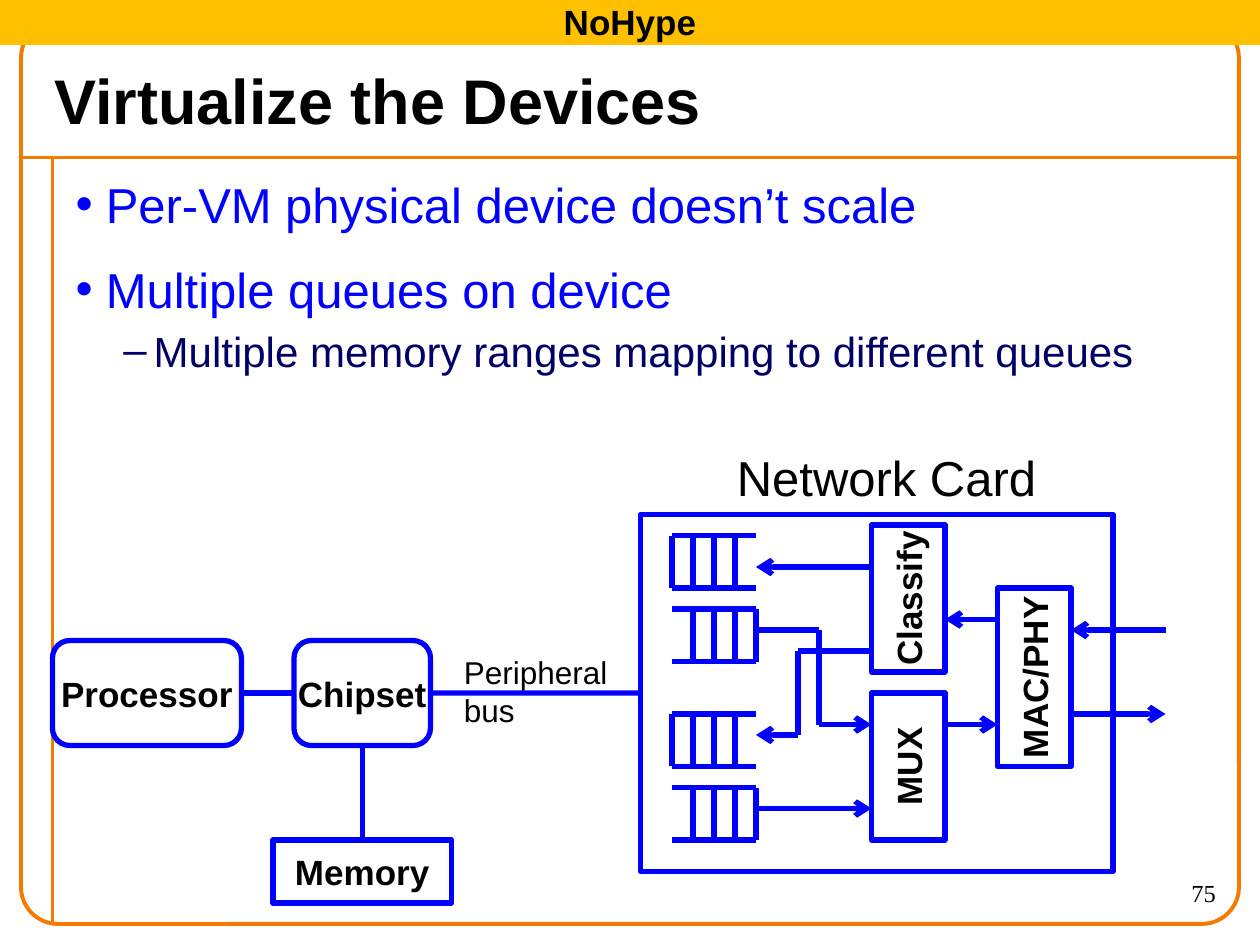
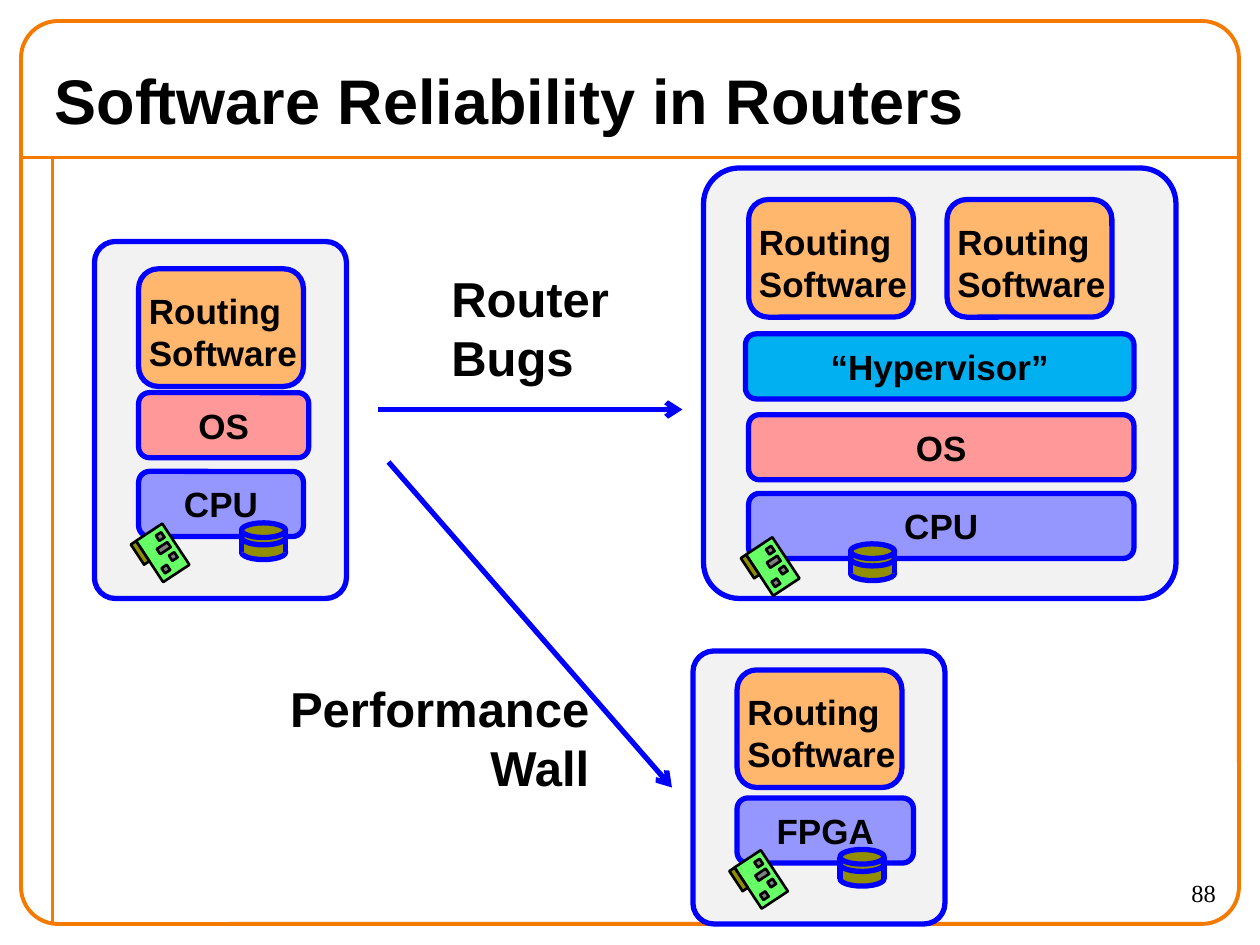
from itertools import pairwise

from lxml import etree
from pptx import Presentation
from pptx import util as u
from pptx.dml.color import RGBColor
from pptx.enum import shapes, text
from pptx.oxml.ns import qn

ORANGE = RGBColor(0xF4, 0x7A, 0x00)
BLUE = RGBColor(0x00, 0x00, 0xFF)
NAVY = RGBColor(0x00, 0x00, 0x66)
BLACK = RGBColor(0x00, 0x00, 0x00)
GOLD = RGBColor(0xFF, 0xC0, 0x00)
PANEL = RGBColor(0xF2, 0xF2, 0xF2)
PEACH = RGBColor(0xFF, 0xB6, 0x6D)
PINK = RGBColor(0xFF, 0x99, 0x99)
VIOLET = RGBColor(0x96, 0x96, 0xFF)
SKY = RGBColor(0x00, 0xB0, 0xF0)
OLIVE = RGBColor(0x91, 0x8E, 0x00)
GREEN = RGBColor(0x66, 0xFF, 0x66)
GRAY = RGBColor(0x80, 0x80, 0x80)

RECT = shapes.MSO_SHAPE.RECTANGLE
ROUND = shapes.MSO_SHAPE.ROUNDED_RECTANGLE
OVAL = shapes.MSO_SHAPE.OVAL
LEFT, CENTER, RIGHT = text.PP_ALIGN.LEFT, text.PP_ALIGN.CENTER, text.PP_ALIGN.RIGHT
MIDDLE = text.MSO_ANCHOR.MIDDLE

TITLE = dict(name="Arial", size=u.Pt(36), bold=True)
LABEL = dict(name="Arial", size=u.Pt(20), bold=True)
CALLOUT = dict(name="Arial", size=u.Pt(28), bold=True)
CAPTION = dict(name="Arial", size=u.Pt(28), bold=False)
NOTE = dict(name="Arial", size=u.Pt(18), bold=False)
NUMBER = dict(name="Times New Roman", size=u.Pt(14), bold=False)

BULLETS = [
    dict(char="•", size=28, color=BLUE, margin=0.24, level=0),
    dict(char="–", size=24, color=NAVY, margin=0.62, level=1),
]
CARD_PARTS = [
    (0, 0, 3, 4.7, GREEN),
    (-0.96, 1.2, 0.6, 2.3, OLIVE),
    (0.96, 0.5, 0.6, 0.6, GRAY),
    (2.2, 2.4, 0.6, 0.6, GRAY),
    (1, 1.6, 1.2, 0.6, GRAY),
    (1.5, 3.6, 0.6, 0.6, GRAY),
]


def grid(*cells):
    return [u.Inches(c / 12) for c in cells]


def set_all(obj, values):
    for key, value in values.items():
        setattr(obj, key, value)


def write(tf, lines, style, align=LEFT, color=BLACK):
    for i, line in enumerate(lines):
        p = tf.paragraphs[0] if i == 0 else tf.add_paragraph()
        p.alignment = align
        r = p.add_run()
        r.text = line
        set_all(r.font, style)
        r.font.color.rgb = color


def label(s, box, lines, style, align=LEFT):
    tf = s.shapes.add_textbox(*grid(*box)).text_frame
    tf.word_wrap = False
    write(tf, lines, style, align)


def block(s, kind, box, caption=None, fill=None, line=BLUE, width=3, adj=None, vertical=False):
    sp = s.shapes.add_shape(kind, *grid(*box))
    sp.shadow.inherit = False
    if adj is not None:
        sp.adjustments[0] = adj
    for part, color in ((sp.fill, fill), (sp.line.fill, line)):
        if color is None:
            part.background()
        else:
            part.solid()
            part.fore_color.rgb = color
    if line is not None:
        sp.line.width = u.Pt(width)
    if caption:
        tf = sp.text_frame
        set_all(tf, dict(word_wrap=False, vertical_anchor=MIDDLE))
        write(tf, [caption], LABEL, CENTER)
        if vertical:
            tf._txBody.bodyPr.set("vert", "vert270")
    return sp


def line(s, start, end, color=BLUE, width=3, arrow=False):
    cx = s.shapes.add_connector(shapes.MSO_CONNECTOR.STRAIGHT, *grid(*start, *end))
    cx.line.color.rgb = color
    cx.line.width = u.Pt(width)
    if arrow:
        etree.SubElement(cx.line._get_or_add_ln(), qn("a:tailEnd"), type="arrow")
    etree.SubElement(cx._element.spPr, qn("a:effectLst"))
    return cx


def join(s, a, a_side, b, b_side):
    cx = line(s, (0, 0), (1, 1))
    cx.begin_connect(a, a_side)
    cx.end_connect(b, b_side)


def route(s, *points):
    legs = list(pairwise(points))
    for i, (start, end) in enumerate(legs):
        line(s, start, end, arrow=i == len(legs) - 1)


def place(sp, box):
    set_all(sp, dict(zip(("left", "top", "width", "height"), grid(*box))))
    sp.text_frame.auto_size = text.MSO_AUTO_SIZE.NONE


def base_slide(prs, layout, title, number):
    s = prs.slides.add_slide(prs.slide_layouts[layout])
    line(s, (2, 15), (118, 15), ORANGE, 2.25)
    line(s, (5, 15), (5, 88), ORANGE, 2.25)
    block(s, ROUND, (2, 2, 116, 86), line=ORANGE, width=2.25, adj=0.041)
    place(s.shapes.title, (4, 5, 105.8, 9))
    tf = s.shapes.title.text_frame
    tf.vertical_anchor = MIDDLE
    write(tf, [title], TITLE)
    label(s, (105, 83, 12, 5), [number], NUMBER, RIGHT)
    return s


def bullet_list(s, items):
    body = s.placeholders[1]
    place(body, (6, 16, 111, 72))
    for i, (level, before, item) in enumerate(items):
        style = BULLETS[level]
        p = body.text_frame.paragraphs[0] if i == 0 else body.text_frame.add_paragraph()
        set_all(p, dict(level=level, space_before=u.Pt(before)))
        r = p.add_run()
        r.text = item
        set_all(r.font, dict(name="Arial", size=u.Pt(style["size"])))
        r.font.color.rgb = style["color"]
        pPr = p._p.get_or_add_pPr()
        pPr.set("marL", str(u.Inches(style["margin"])))
        pPr.set("indent", str(u.Inches(-0.24)))
        etree.SubElement(pPr, qn("a:buChar"), char=style["char"])


def queue(s, top, first_bar):
    for x in range(first_bar, first_bar + 8, 2):
        line(s, (x, top), (x, top + 5))
    for y in (top, top + 5):
        line(s, (64, y), (72, y))


def routing_software(s, x, y):
    block(s, ROUND, (x, y, 15.7, 11.2), fill=PEACH)
    label(s, (x - 0.2, y + 1.4, 18, 9.2), ["Routing", "Software"], LABEL)


def disk(s, x, y):
    block(s, OVAL, (x, y + 2.1, 4.2, 1.4), fill=OLIVE)
    block(s, RECT, (x, y + 0.7, 4.2, 2.1), fill=OLIVE, line=None)
    for top in (y + 0.7, y):
        block(s, OVAL, (x, top, 4.2, 1.4), fill=OLIVE)
    for side in (x, x + 4.2):
        line(s, (side, y + 0.7), (side, y + 2.8))


def circuit_card(s, x, y):
    for dx, dy, w, h, fill in CARD_PARTS:
        sp = block(s, RECT, (x + dx, y + dy, w, h), fill=fill, line=BLACK, width=1.5)
        sp.rotation = 326.6


def router(s, panel, layers, software, disk_at, card_at):
    block(s, ROUND, panel, fill=PANEL, adj=0.083)
    for caption, fill, x, y, w in layers:
        block(s, ROUND, (x, y, w, 6.2), caption, fill)
    for spot in software:
        routing_software(s, *spot)
    disk(s, *disk_at)
    circuit_card(s, *card_at)


def devices_slide(prs):
    s = base_slide(prs, 1, "Virtualize the Devices", "75")
    bullet_list(s, [
        (0, 3, "Per-VM physical device doesn’t scale"),
        (0, 15, "Multiple queues on device"),
        (1, 4, "Multiple memory ranges mapping to different queues"),
    ])
    network_card = block(s, RECT, (61, 49, 45, 34))
    processor = block(s, ROUND, (5, 61, 18, 10), "Processor")
    chipset = block(s, ROUND, (28, 61, 13, 10), "Chipset")
    memory = block(s, RECT, (26, 80, 17, 6), "Memory")
    for top in (51, 68):
        queue(s, top, 64)
        queue(s, top + 7, 66)
    for caption, box in (("Classify", (83, 50, 7, 14)), ("MUX", (83, 66, 7, 14)),
                         ("MAC/PHY", (95, 56, 7, 17))):
        block(s, RECT, box, caption, vertical=True)
    route(s, (83, 54), (72, 54))
    route(s, (83, 62), (76, 62), (76, 70), (72, 70))
    route(s, (72, 60), (78, 60), (78, 69), (83, 69))
    route(s, (72, 77), (83, 77))
    route(s, (95, 59), (90, 59))
    route(s, (90, 69), (95, 69))
    route(s, (111, 60), (102, 60))
    route(s, (102, 68), (111, 68))
    join(s, processor, 3, chipset, 1)
    join(s, chipset, 3, network_card, 1)
    join(s, chipset, 2, memory, 0)
    label(s, (69, 42, 31.3, 6.8), ["Network Card"], CAPTION)
    label(s, (43, 61.6, 16.2, 8.5), ["Peripheral", "bus"], NOTE)
    block(s, RECT, (0, 0, 120, 4), "NoHype", GOLD, GOLD)


def routers_slide(prs):
    s = base_slide(prs, 5, "Software Reliability in Routers", "88")
    router(s, (9, 23, 24, 34),
           [("CPU", VIOLET, 13.2, 44.9, 15.7), ("OS", PINK, 13.2, 37.4, 16.2)],
           [(13.2, 25.6)], (23, 49.8), (14, 50.3))
    router(s, (67, 16, 45, 41),
           [("CPU", VIOLET, 71.3, 47, 36.7), ("OS", PINK, 71.3, 39.5, 36.7),
            ("“Hypervisor”", SKY, 71, 31.8, 37)],
           [(71.3, 19), (90.2, 19)], (81, 51.8), (72.1, 51.6))
    router(s, (66, 62, 24, 26), [("FPGA", VIOLET, 70.2, 76, 16.8)],
           [(70.2, 63.8)], (80, 80.9), (71, 81.4))
    route(s, (36, 39), (65, 39))
    route(s, (37, 44), (64, 75))
    label(s, (41.8, 25, 17.6, 12.5), ["Router", "Bugs"], CALLOUT)
    label(s, (26, 64, 31.3, 12.5), ["Performance", "Wall"], CALLOUT, RIGHT)


def main():
    prs = Presentation()
    prs.slide_width, prs.slide_height = grid(120, 90)
    devices_slide(prs)
    routers_slide(prs)
    prs.save("out.pptx")


if __name__ == "__main__":
    main()
